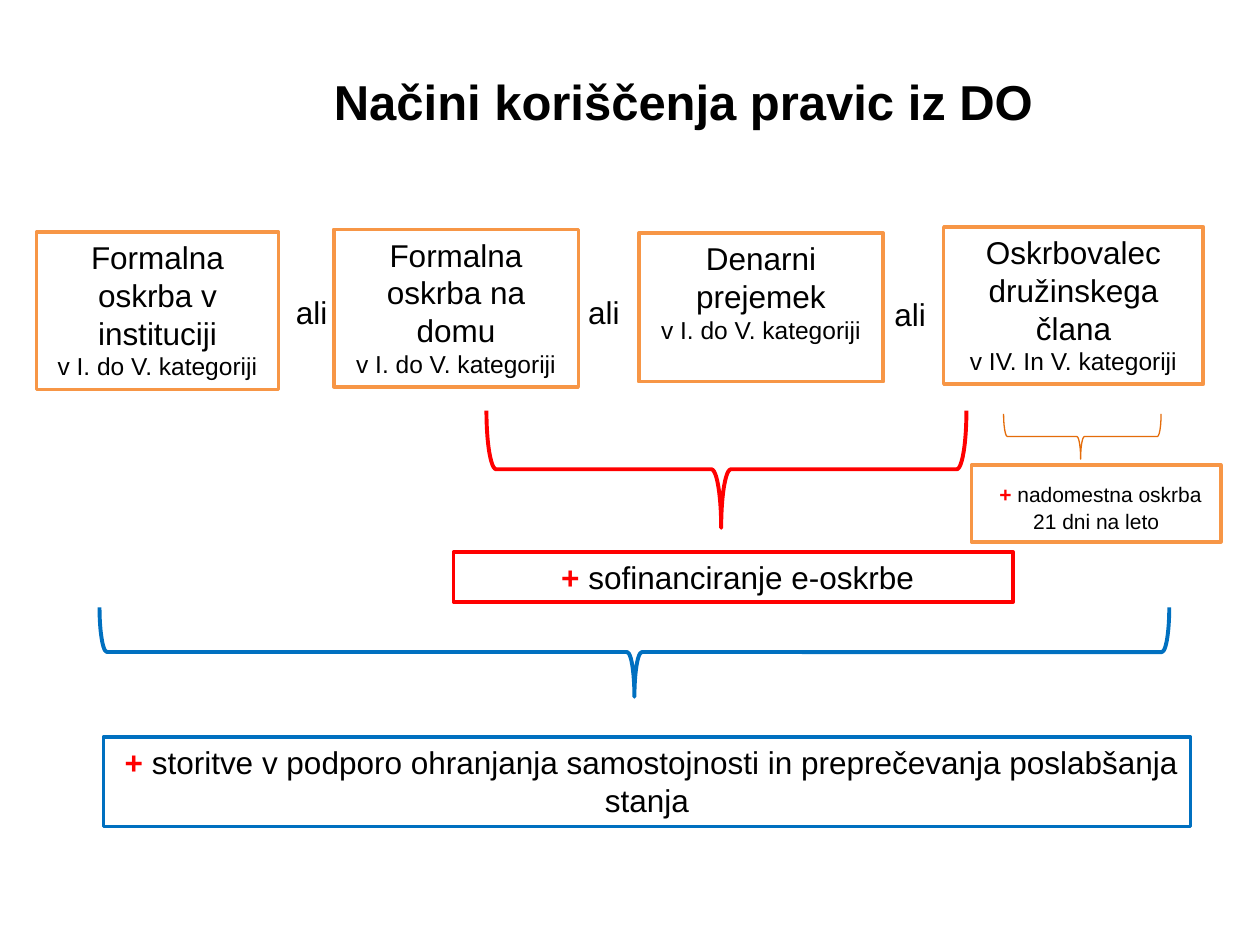
from pptx import Presentation, util as u
from pptx.dml.color import RGBColor
from pptx.enum import shapes, text

COLS, ROWS = 100, 75
WIDE, HIGH = u.Inches(10), u.Inches(7.5)
INK = {"black": "000000", "white": "FFFFFF", "red": "FF0000",
       "orange": "F79646", "rust": "E46C0A", "blue": "0070C0"}


def tint(name):
    return RGBColor.from_string(INK[name])


def grid(left, top, wide, high):
    return (round(left * WIDE / COLS), round(top * HIGH / ROWS),
            round(wide * WIDE / COLS), round(high * HIGH / ROWS))


def write(para, words, size=18, bold=False, color="black", align=None):
    run = para.add_run()
    run.text = words
    run.font.size, run.font.bold, run.font.name = u.Pt(size), bold, "Arial"
    run.font.color.rgb = tint(color)
    if align is not None:
        para.alignment = align


def label(slide, place, words):
    frame = slide.shapes.add_textbox(*grid(*place)).text_frame
    frame.word_wrap = True
    write(frame.paragraphs[0], words)


def box(slide, place, color):
    shape = slide.shapes.add_shape(shapes.MSO_SHAPE.RECTANGLE, *grid(*place))
    shape.shadow.inherit = False
    shape.fill.solid()
    shape.fill.fore_color.rgb = tint("white")
    shape.line.color.rgb = tint(color)
    shape.line.width = u.Pt(2)
    frame = shape.text_frame
    frame.word_wrap = True
    frame.vertical_anchor = text.MSO_ANCHOR.TOP
    frame.paragraphs[0].alignment = text.PP_ALIGN.CENTER
    return frame


def option(slide, place, name, level):
    frame = box(slide, place, "orange")
    write(frame.paragraphs[0], name)
    write(frame.add_paragraph(), level, size=14, align=text.PP_ALIGN.CENTER)


def extra(slide, place, color, words, size=18):
    para = box(slide, place, color).paragraphs[0]
    write(para, " ", bold=True)
    write(para, "+ ", size=size, bold=True, color="red")
    write(para, words, size=size)


def brace(slide, place, color, weight, tip=0.5):
    left, top, wide, high = grid(*place)
    shape = slide.shapes.add_shape(
        shapes.MSO_SHAPE.RIGHT_BRACE, left + (wide - high) // 2,
        top + (high - wide) // 2, high, wide)
    shape.rotation = 90
    shape.shadow.inherit = False
    shape.adjustments[0], shape.adjustments[1] = 0.083, tip
    shape.fill.background()
    shape.line.color.rgb = tint(color)
    shape.line.width = u.Pt(weight)


def head(slide, place, words):
    title = slide.shapes.title
    title.left, title.top, title.width, title.height = grid(*place)
    frame = title.text_frame
    frame.margin_left = frame.margin_right = frame.margin_top = frame.margin_bottom = 0
    frame.word_wrap = False
    frame.auto_size = text.MSO_AUTO_SIZE.NONE
    frame.vertical_anchor = text.MSO_ANCHOR.TOP
    write(frame.paragraphs[0], words, size=28, bold=True, align=text.PP_ALIGN.LEFT)


def main():
    deck = Presentation()
    deck.slide_width, deck.slide_height = WIDE, HIGH
    slide = deck.slides.add_slide(deck.slide_layouts[5])
    head(slide, (26.5, 5.7, 64.5, 6.1), "Načini koriščenja pravic iz DO")

    level = "v I. do V. kategoriji"
    for place, name, grade in (
            ((2.9, 18.4, 19.2, 12.5), "Formalna oskrba v instituciji", level),
            ((26.5, 18.2, 19.4, 12.5), "Formalna oskrba na domu", level),
            ((50.7, 18.5, 19.4, 11.8), "Denarni prejemek", level),
            ((74.9, 18, 20.6, 12.5), "Oskrbovalec družinskega člana",
             "v IV. In V. kategoriji")):
        option(slide, place, name, grade)
    for left, top in ((22.5, 22.8), (45.7, 22.8), (70, 22.9)):
        label(slide, (left, top, 4.9, 4), "ali")

    brace(slide, (79.65, 32.85, 12.5, 3.6), "rust", 0.75, tip=0.511)
    brace(slide, (38.6, 32.6, 38.1, 9.3), "red", 2.25, tip=0.511)
    brace(slide, (7.9, 48.2, 84.9, 7.1), "blue", 2.25)

    extra(slide, (77.1, 36.9, 19.8, 6.1), "orange",
          "nadomestna oskrba 21 dni na leto", size=12)
    extra(slide, (36, 43.8, 44.4, 4), "red", "sofinanciranje e-oskrbe")
    extra(slide, (8.2, 58.5, 86.3, 7.1), "blue",
          "storitve v podporo ohranjanja samostojnosti in preprečevanja poslabšanja stanja")
    deck.save("out.pptx")


if __name__ == "__main__":
    main()
